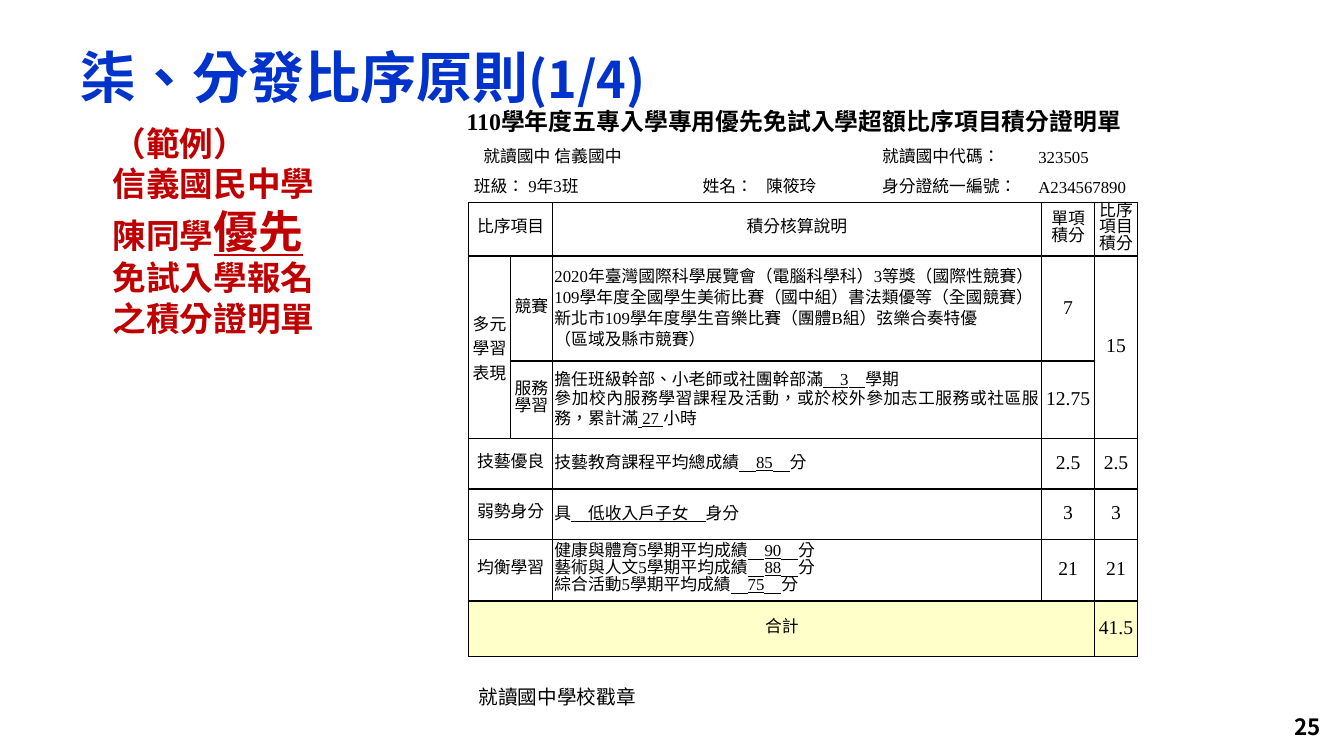
from dataclasses import dataclass
from lxml import etree
from pptx import Presentation
from pptx import util as u
from pptx.dml import color
from pptx.enum import text as t
from pptx.oxml import ns

MID = t.MSO_ANCHOR.MIDDLE
CENTER, LEFT, RIGHT, JUST = (t.PP_ALIGN.CENTER, t.PP_ALIGN.LEFT,
                             t.PP_ALIGN.RIGHT, t.PP_ALIGN.JUSTIFY)


@dataclass(frozen=True)
class Theme:
    """Colours, fonts and type sizes of the slide."""
    sans: str = "Noto Sans CJK SC"
    serif: str = "Times New Roman"
    blue: str = "0033CC"
    red: str = "C00000"
    black: str = "000000"
    cream: str = "FFFFCA"
    title: int = 40
    count: int = 36
    big: int = 32
    note: int = 24
    head: int = 17
    page: int = 16
    score: int = 14
    cell: int = 12


LOOK = Theme()
COLS = [0.41, 0.16, 0.26, 1.38, 0.72, 1.15, 1.55, 0.05, 0.53, 0.42]
ROWS = [0.25, 0.28, 0.53, 1.04, 0.77, 0.5, 0.5, 0.61, 0.55]

TOP = [
    (0, 0, 3, "就讀國中：", RIGHT), (0, 3, 1, "信義國中", LEFT),
    (0, 4, 2, "", LEFT), (0, 6, 1, "就讀國中代碼：", JUST),
    (0, 7, 3, "323505", LEFT),
    (1, 0, 2, "班級：", RIGHT), (1, 2, 2, "9年3班", LEFT),
    (1, 4, 1, "姓名：", JUST), (1, 5, 1, "陳筱玲", JUST),
    (1, 6, 1, "身分證統一編號：", JUST), (1, 7, 3, "A234567890", LEFT),
]
LABELS = [
    (2, 0, 1, 3, "比序項目"), (2, 3, 1, 5, "積分核算說明"),
    (2, 8, 1, 1, "單項\n積分"), (2, 9, 1, 1, "比序項目積分"),
    (3, 1, 1, 2, "競賽"), (4, 1, 1, 2, "服務\n學習"),
    (5, 0, 1, 3, "技藝優良"), (6, 0, 1, 3, "弱勢身分"),
    (7, 0, 1, 3, "均衡學習"), (8, 0, 1, 9, "合計"),
]
DETAILS = [
    (3, 15, JUST, "2020年臺灣國際科學展覽會（電腦科學科）3等獎（國際性競賽）\n"
     "109學年度全國學生美術比賽（國中組）書法類優等（全國競賽）\n"
     "新北市109學年度學生音樂比賽（團體B組）弦樂合奏特優\n"
     "（區域及縣市競賽）"),
    (4, 14, JUST, "擔任班級幹部、小老師或社團幹部滿|　3　|學期\n"
     "參加校內服務學習課程及活動，或於校外參加志工服務或社區服務，"
     "累計滿| 27 |小時"),
    (5, 14, JUST, "技藝教育課程平均總成績|　85　|分"),
    (6, 14, JUST, "具|　低收入戶子女　|身分"),
    (7, 12, LEFT, "健康與體育5學期平均成績|　90　|分\n"
     "藝術與人文5學期平均成績|　88　|分\n"
     "綜合活動5學期平均成績|　75　|分"),
]
SCORES = [
    (3, 8, 1, "7"), (3, 9, 2, "15"), (4, 8, 1, "12.75"),
    (5, 8, 1, "2.5"), (5, 9, 1, "2.5"), (6, 8, 1, "3"), (6, 9, 1, "3"),
    (7, 8, 1, "21"), (7, 9, 1, "21"), (8, 9, 1, "41.5"),
]


def put(obj, **vals):
    """Set each given format value on an object."""
    for key, val in vals.items():
        setattr(obj, key, val)


def add_run(para, words, size, name, hue, **vals):
    """Add one run with its Latin and East Asian fonts."""
    run = para.add_run()
    run.text = words
    put(run.font, size=u.Pt(size), name=name, **vals)
    run.font.color.rgb = color.RGBColor.from_string(hue)
    props = run.font._element
    props.set("lang", "zh-TW")
    east = etree.SubElement(props, ns.qn("a:ea"))
    east.set("typeface", LOOK.sans)


def write(frame, words, size, name, hue, align=LEFT, lead=None, big=None,
          **vals):
    """Write lines of text, with pieces between bars underlined."""
    for i, line in enumerate(words.split("\n")):
        para = frame.paragraphs[0] if i == 0 else frame.add_paragraph()
        put(para, alignment=align, line_spacing=lead)
        for j, piece in enumerate(line.split("|")):
            if piece or not line:
                mark = j % 2 == 1
                add_run(para, piece, big if mark and big else size, name, hue,
                        underline=mark, **vals)


def add_box(slide, spot, words, size, name, hue, wrap=True, anchor=None,
            **vals):
    """Add a text box at a place given in inches."""
    box = slide.shapes.add_textbox(*map(u.Inches, spot))
    put(box.text_frame, word_wrap=wrap, vertical_anchor=anchor)
    write(box.text_frame, words, size, name, hue, **vals)


def add_title(slide):
    """Place the title with its smaller page count."""
    title = slide.shapes.title
    put(title, left=u.Inches(0.7), top=u.Inches(0.4),
        width=u.Inches(11.5), height=u.Inches(0.8))
    put(title.text_frame, vertical_anchor=MID, auto_size=t.MSO_AUTO_SIZE.NONE)
    para = title.text_frame.paragraphs[0]
    put(para, alignment=LEFT, line_spacing=0.9)
    for words, size in [("柒、分發比序原則", LOOK.title), ("(1/4)", LOOK.count)]:
        add_run(para, words, size, LOOK.sans, LOOK.blue, bold=True)


def set_edge(cell, side, shown):
    """Draw or hide one border of a cell."""
    line = etree.SubElement(cell._tc.get_or_add_tcPr(), ns.qn("a:ln" + side))
    line.set("w", str(u.Pt(1)))
    fill = etree.SubElement(line, ns.qn("a:solidFill" if shown else "a:noFill"))
    if shown:
        etree.SubElement(fill, ns.qn("a:srgbClr")).set("val", LOOK.black)


def style_cell(cell, row):
    """Set the margins, borders and fill of a cell."""
    put(cell, margin_left=u.Inches(0.02), margin_right=u.Inches(0.02),
        margin_top=0, margin_bottom=0, vertical_anchor=MID)
    for side in "LRTB":
        set_edge(cell, side, row > 1 or (row == 1 and side == "B"))
    if row == len(ROWS) - 1:
        cell.fill.solid()
        cell.fill.fore_color.rgb = color.RGBColor.from_string(LOOK.cream)
    else:
        cell.fill.background()


def fill_cell(grid, row, col, tall, wide, words, align=CENTER, lead=12,
              size=LOOK.cell):
    """Merge a block of cells and write its text."""
    cell = grid.cell(row, col)
    if tall * wide > 1:
        cell.merge(grid.cell(row + tall - 1, col + wide - 1))
    write(cell.text_frame, words, size, LOOK.serif, LOOK.black, align,
          u.Pt(lead) if lead else None)


def add_grid(slide):
    """Add the score table."""
    spot = map(u.Inches, (4.65, 1.43, sum(COLS), sum(ROWS)))
    grid = slide.shapes.add_table(len(ROWS), len(COLS), *spot).table
    put(grid, first_row=False, horz_banding=False)
    for col, wide in zip(grid.columns, COLS):
        col.width = u.Inches(wide)
    for i, (row, tall) in enumerate(zip(grid.rows, ROWS)):
        row.height = u.Inches(tall)
        for cell in row.cells:
            style_cell(cell, i)
    for row, col, wide, words, align in TOP:
        fill_cell(grid, row, col, 1, wide, words, align)
    grid.cell(1, 4).margin_left = u.Inches(0.11)
    for label in LABELS:
        fill_cell(grid, *label)
    fill_cell(grid, 3, 0, 2, 1, "多元學習表現", lead=None)
    for row, lead, align, words in DETAILS:
        fill_cell(grid, row, 3, 1, 5, words, align, lead)
    for row, col, tall, words in SCORES:
        fill_cell(grid, row, col, tall, 1, words, lead=14, size=LOOK.score)


def main():
    """Build the slide and save it."""
    deck = Presentation()
    put(deck, slide_width=u.Inches(13.33), slide_height=u.Inches(7.5))
    slide = deck.slides.add_slide(deck.slide_layouts[5])
    add_title(slide)
    add_box(slide, (1.02, 1.17, 3.13, 2.26),
            "（範例）\n信義國民中學\n陳同學|優先|\n免試入學報名\n之積分證明單",
            LOOK.note, LOOK.sans, LOOK.red, big=LOOK.big, bold=True)
    add_grid(slide)
    add_box(slide, (4.53, 1.01, 6.76, 0.39),
            "110學年度五專入學專用優先免試入學超額比序項目積分證明單",
            LOOK.head, LOOK.serif, LOOK.black, wrap=False, bold=True)
    add_box(slide, (4.65, 6.75, 1.77, 0.34), "就讀國中學校戳章",
            LOOK.score, LOOK.sans, LOOK.black, wrap=False)
    add_box(slide, (10.2, 7.01, 3, 0.4), "25", LOOK.page, LOOK.sans,
            LOOK.black, anchor=MID, align=RIGHT, bold=True)
    deck.save("out.pptx")


if __name__ == "__main__":
    main()
